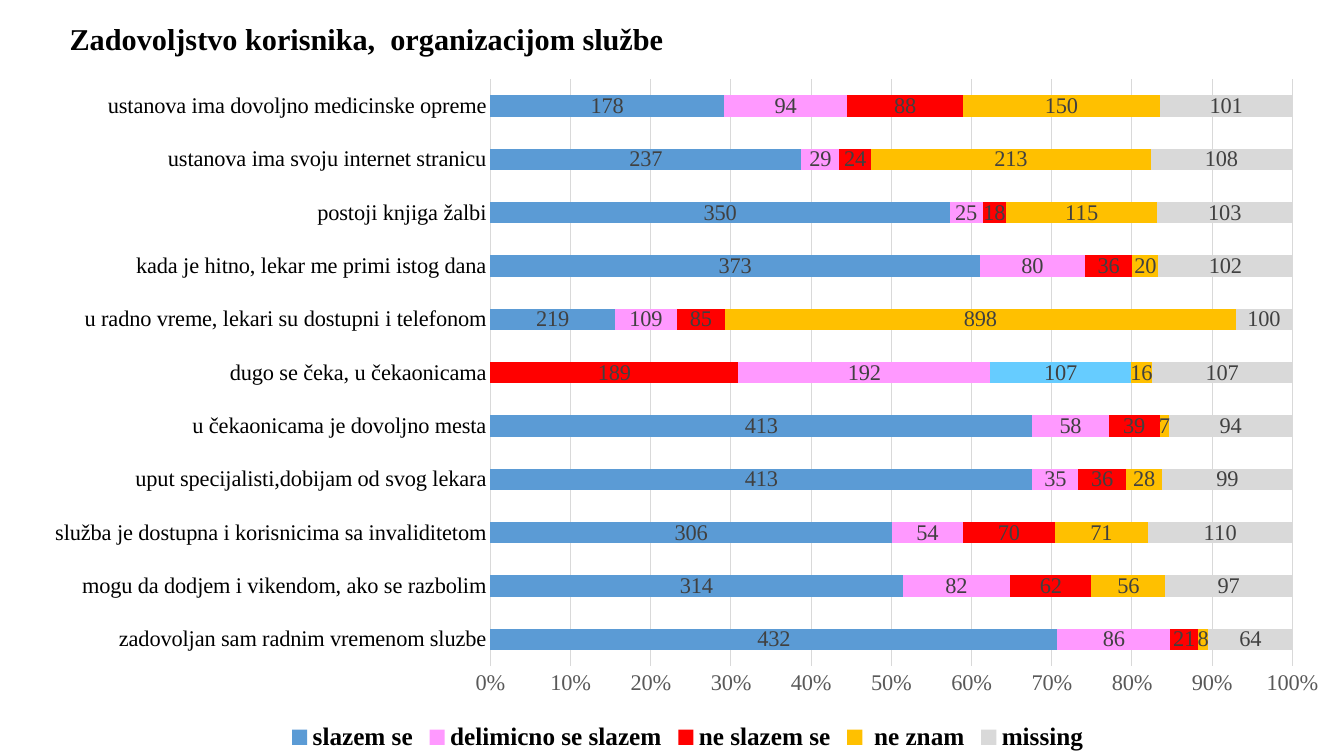
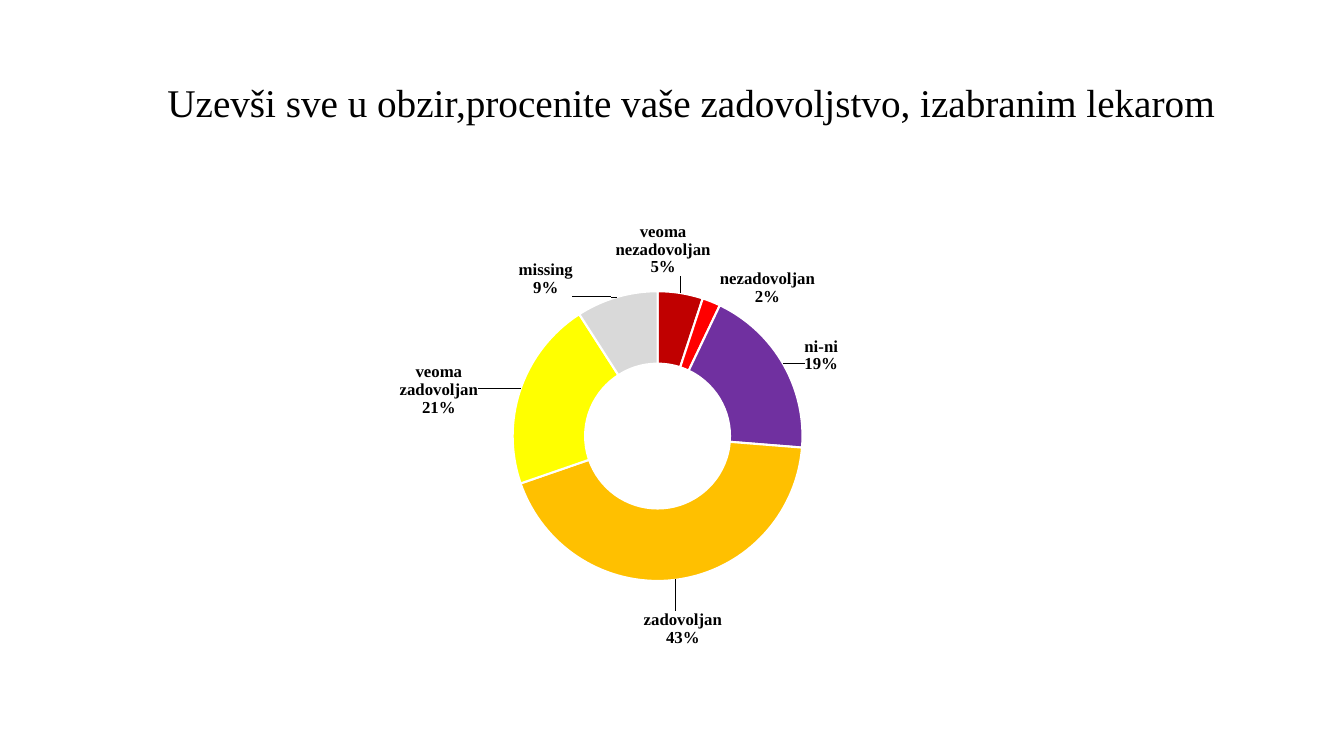
from copy import deepcopy

from lxml.etree import SubElement
from pptx import Presentation
from pptx.chart.data import CategoryChartData
from pptx.dml.color import RGBColor
from pptx.enum.chart import XL_CHART_TYPE as ChartType, XL_LEGEND_POSITION as LegendPosition
from pptx.enum.chart import XL_TICK_MARK as TickMark
from pptx.enum.text import MSO_ANCHOR, MSO_AUTO_SIZE, PP_ALIGN
from pptx.oxml.ns import qn
from pptx.util import Inches, Pt

FONT = "Times New Roman"
COLORS = {
    "text": "000000", "axis": "595959", "label": "404040", "grid": "D9D9D9",
    "white": "FFFFFF", "blue": "5B9BD5", "sky": "66CCFF", "pink": "FF99FF",
    "red": "FF0000", "dark red": "C00000", "amber": "FFC000", "yellow": "FFFF00",
    "purple": "7030A0", "gray": "D9D9D9",
}

SERVICE = {
    "title": "Zadovoljstvo korisnika,  organizacijom službe",
    "title_box": (0.59, 0.12, 6.49, 0.57),
    "title_format": {"size": 21.6, "bold": True},
    "chart_box": (0.3, 0.65, 13.04, 6.85),
    "plot_box": (0.35, 0.02, 0.61, 0.85),
}
STATEMENTS = [
    "zadovoljan sam radnim vremenom sluzbe",
    "mogu da dodjem i vikendom, ako se razbolim",
    "služba je dostupna i korisnicima sa invaliditetom",
    "uput specijalisti,dobijam od svog lekara",
    "u čekaonicama je dovoljno mesta",
    "dugo se čeka, u čekaonicama",
    "u radno vreme, lekari su dostupni i telefonom",
    "kada je hitno, lekar me primi istog dana",
    "postoji knjiga žalbi",
    "ustanova ima svoju internet stranicu",
    "ustanova ima dovoljno medicinske opreme",
]
ANSWERS = [
    ("slazem se", "blue", (432, 314, 306, 413, 413, 189, 219, 373, 350, 237, 178)),
    ("delimicno se slazem", "pink", (86, 82, 54, 35, 58, 192, 109, 80, 25, 29, 94)),
    ("ne slazem se", "red", (21, 62, 70, 36, 39, 107, 85, 36, 18, 24, 88)),
    (" ne znam", "amber", (8, 56, 71, 28, 7, 16, 898, 20, 115, 213, 150)),
    ("missing", "gray", (64, 97, 110, 99, 94, 107, 100, 102, 103, 108, 101)),
]
WAITING = STATEMENTS.index("dugo se čeka, u čekaonicama")
WAITING_COLORS = {"slazem se": "red", "ne slazem se": "sky"}

DOCTOR = {
    "title": "Uzevši sve u obzir,procenite vaše zadovoljstvo, izabranim lekarom",
    "title_box": (1.56, 0.31, 11.5, 1.45),
    "title_format": {"size": 28, "bold": False},
    "chart_box": (1.06, 1.96, 11.5, 5.26),
    "plot_box": (0.35, 0.08, 0.25, 0.74),
}
# rating, percent, color, label offset as a share of the chart
RATINGS = [
    ("veoma nezadovoljan", 5, "dark red", (-0.01, -0.15)),
    ("nezadovoljan", 2, "red", (0.06, -0.09)),
    ("ni-ni", 19, "purple", (0.06, -0.05)),
    ("zadovoljan", 43, "amber", (0.01, 0.16)),
    ("veoma zadovoljan", 21, "yellow", (-0.1, -0.02)),
    ("missing", 9, "gray", (-0.07, -0.1)),
]


def rgb(color):
    return RGBColor.from_string(COLORS[color])


def set_font(font, size, color="text", bold=False):
    for name, value in {"name": FONT, "size": Pt(size), "bold": bold}.items():
        setattr(font, name, value)
    font.color.rgb = rgb(color)


def set_fill(part, color):
    part.format.fill.solid()
    part.format.fill.fore_color.rgb = rgb(color)


def set_line(part, color, width):
    part.format.line.color.rgb = rgb(color)
    part.format.line.width = Pt(width)


def add_layout(parent, position, values):
    """Place a chart part by hand; values follow the order of the keys x, y, w, h."""
    for old in parent.findall(qn("c:layout")):
        parent.remove(old)
    layout = SubElement(parent, qn("c:layout"))
    parent.insert(position, layout)
    manual = SubElement(layout, qn("c:manualLayout"))
    settings = []
    if len(values) == 4:
        settings = [("layoutTarget", "inner"), ("xMode", "edge"), ("yMode", "edge")]
    for tag, value in settings + list(zip("xywh", values)):
        SubElement(manual, qn(f"c:{tag}")).set("val", str(value))


def add_chart_slide(presentation, content, chart_type, chart_data):
    slide = presentation.slides.add_slide(presentation.slide_layouts[5])
    title = slide.shapes.title
    box = map(Inches, content["title_box"])
    for name, value in zip(("left", "top", "width", "height"), box):
        setattr(title, name, value)
    frame = title.text_frame
    frame.text = content["title"]
    frame.auto_size = MSO_AUTO_SIZE.NONE
    frame.vertical_anchor = MSO_ANCHOR.MIDDLE
    paragraph = frame.paragraphs[0]
    paragraph.alignment = PP_ALIGN.LEFT
    paragraph.line_spacing = 0.9
    set_font(paragraph.runs[0].font, **content["title_format"])

    box = map(Inches, content["chart_box"])
    chart = slide.shapes.add_chart(chart_type, *box, chart_data).chart
    chart.has_title = False
    chart.has_legend = False
    add_layout(chart._chartSpace.chart.plotArea, 0, content["plot_box"])
    return chart


def add_service_slide(presentation):
    data = CategoryChartData()
    data.categories = STATEMENTS
    for name, _, values in ANSWERS:
        data.add_series(name, values)
    chart = add_chart_slide(presentation, SERVICE, ChartType.BAR_STACKED_100, data)
    set_font(chart.font, 16)
    plot = chart.plots[0]
    for name, value in {"gap_width": 150, "overlap": 100, "vary_by_categories": False}.items():
        setattr(plot, name, value)
    for series, (name, color, _) in zip(plot.series, ANSWERS):
        set_fill(series, color)
        if name in WAITING_COLORS:
            set_fill(series.points[WAITING], WAITING_COLORS[name])
        series.data_labels.show_value = True
        set_font(series.data_labels.font, 16, "label")

    for axis, color in ((chart.category_axis, "text"), (chart.value_axis, "axis")):
        axis.major_tick_mark = axis.minor_tick_mark = TickMark.NONE
        set_font(axis.tick_labels.font, 16, color)
    set_line(chart.category_axis, "grid", 0.75)
    value_axis = chart.value_axis
    value_axis.major_unit = 0.1
    value_axis.tick_labels.number_format = "0%"
    value_axis.tick_labels.number_format_is_linked = False
    value_axis.format.line.fill.background()
    set_line(value_axis.major_gridlines, "grid", 0.75)

    chart.has_legend = True
    chart.legend.position = LegendPosition.BOTTOM
    chart.legend.include_in_layout = False
    set_font(chart.legend.font, 18, bold=True)


def move_labels(labels, offsets):
    """Give every point its own label, shifted from its default place."""
    parent = labels._element
    shared = [child for child in parent if child.tag != qn("c:showLeaderLines")]
    for index, offset in enumerate(offsets):
        label = SubElement(parent, qn("c:dLbl"))
        parent.insert(index, label)
        SubElement(label, qn("c:idx")).set("val", str(index))
        add_layout(label, 1, offset)
        label.extend(deepcopy(child) for child in shared)


def add_doctor_slide(presentation):
    data = CategoryChartData()
    names, percents, colors, offsets = zip(*RATINGS)
    data.categories = names
    data.add_series("Series 1", percents)
    chart = add_chart_slide(presentation, DOCTOR, ChartType.DOUGHNUT, data)
    set_font(chart.font, 10)
    chart.font.name = "Calibri"
    plot = chart.plots[0]
    plot.vary_by_categories = True
    plot._element.find(qn("c:holeSize")).set("val", "48")
    series = plot.series[0]
    for index, color in enumerate(colors):
        set_fill(series.points[index], color)
        set_line(series.points[index], "white", 1.5)

    labels = series.data_labels
    formats = {"show_value": False, "show_category_name": True, "show_percentage": True}
    for name, value in formats.items():
        setattr(labels, name, value)
    set_font(labels.font, 12, bold=True)
    separator = SubElement(labels._element, qn("c:separator"))
    separator.text = "\n"
    labels._element.find(qn("c:showBubbleSize")).addnext(separator)
    move_labels(labels, offsets)


def main():
    presentation = Presentation()
    presentation.slide_width = Inches(13.33)
    presentation.slide_height = Inches(7.5)
    add_service_slide(presentation)
    add_doctor_slide(presentation)
    presentation.save("out.pptx")


if __name__ == "__main__":
    main()
